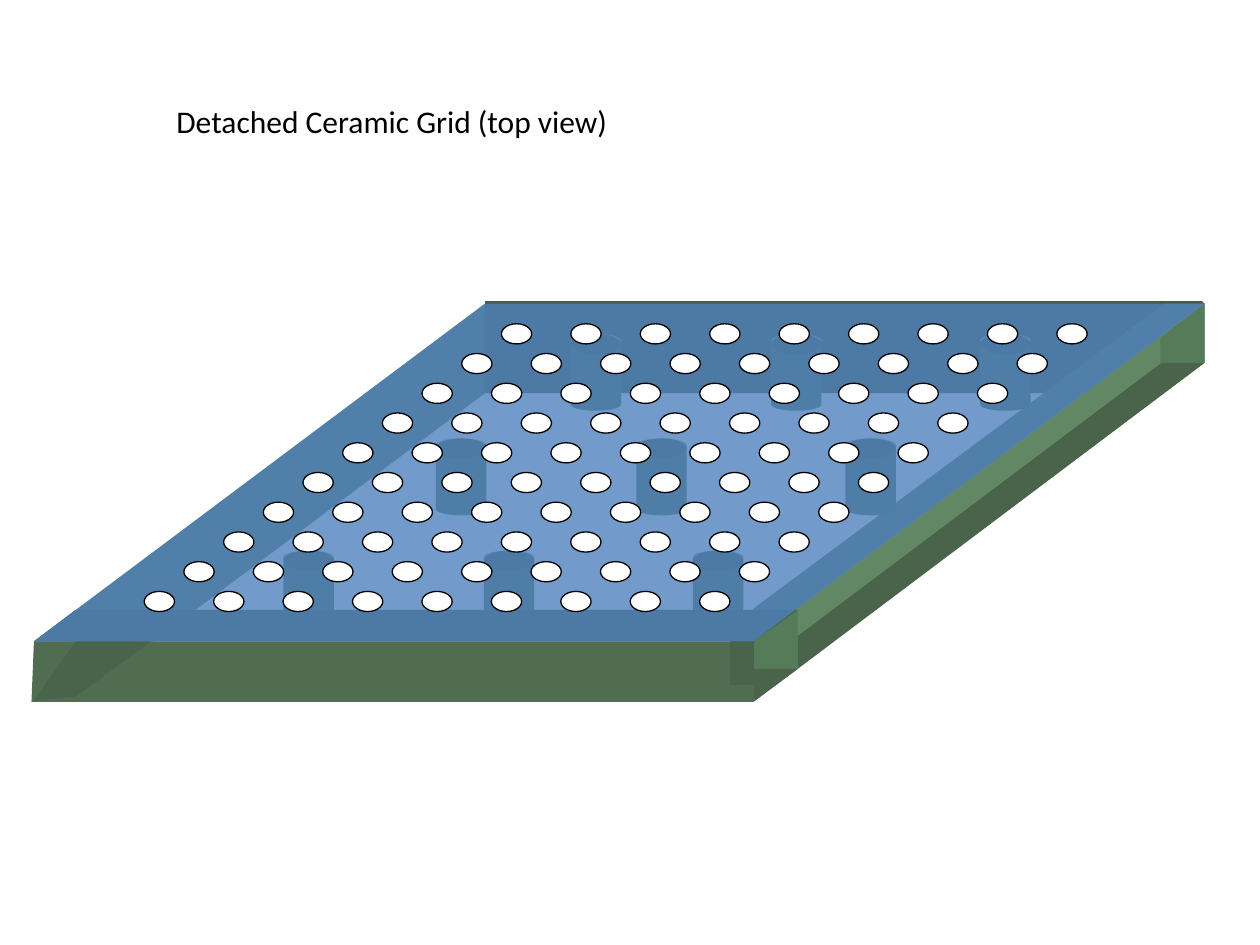
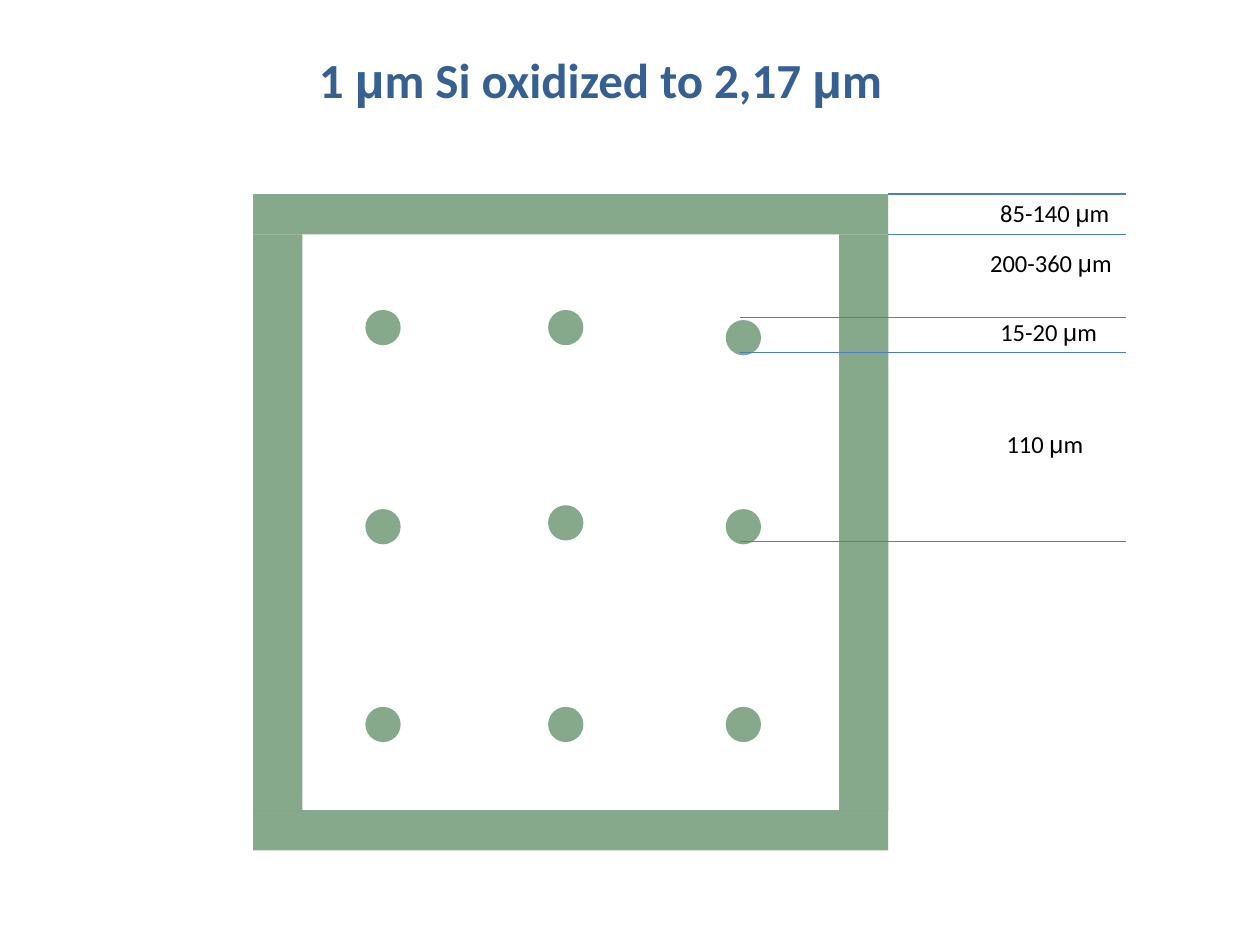
from lxml import etree
from pptx import Presentation
from pptx.dml.color import RGBColor
from pptx.enum.shapes import MSO_CONNECTOR, MSO_SHAPE
from pptx.enum.text import MSO_ANCHOR, MSO_AUTO_SIZE, PP_ALIGN
from pptx.oxml.ns import qn
from pptx.util import Inches, Pt

RECTANGLE, ELLIPSE = MSO_SHAPE.RECTANGLE, MSO_SHAPE.OVAL
CAN, PARALLELOGRAM = MSO_SHAPE.CAN, MSO_SHAPE.PARALLELOGRAM
STRAIGHT = MSO_CONNECTOR.STRAIGHT
LEFT, TOP = PP_ALIGN.LEFT, MSO_ANCHOR.TOP
NO_FIT, GROW = MSO_AUTO_SIZE.NONE, MSO_AUTO_SIZE.SHAPE_TO_FIT_TEXT

COLORS = {
    "oxide": "6A946E",
    "plate": "4F81BD",
    "hole": "FFFFFF",
    "text": "000000",
    "heading": "376092",
    "dimension": "4B7EBC",
    "front": "506D52",
    "side": "618764",
    "corner": "567B59",
    "shade": "4A644C",
    "rim": "547C5E",
    "back": "455E45",
    "post": "4C7456",
}
TITLE_ONLY = 5
TEXT_FONT, GREEK_FONT = "Calibri", "Arial"


def rgb(name):
    return RGBColor.from_string(COLORS[name])


def paint(shape, color, opacity=100, outline=None):
    shape.shadow.inherit = False
    shape.fill.solid()
    shape.fill.fore_color.rgb = rgb(color)
    if opacity < 100:
        tint = shape._element.spPr.find(qn("a:solidFill"))[0]
        etree.SubElement(tint, qn("a:alpha")).set("val", str(opacity * 1000))
    if outline:
        shape.line.color.rgb = rgb(outline)
        shape.line.width = Pt(0.75)
    else:
        shape.line.fill.background()


def add_preset(shapes, kind, box, color, opacity=100, outline=None):
    shape = shapes.add_shape(kind, *map(Inches, box))
    paint(shape, color, opacity, outline)
    return shape


def add_face(shapes, origin, corners, color):
    """Draw a filled polygon whose corners are measured from origin."""
    points = [(Inches(origin[0] + x), Inches(origin[1] + y)) for x, y in corners]
    builder = shapes.build_freeform(*points[0], scale=1.0)
    builder.add_line_segments(points[1:], close=True)
    paint(builder.convert_to_shape(), color)


def write(frame, text, size, color, bold=False):
    """Write one line, setting each Greek letter in its own font."""
    frame.word_wrap = False
    frame.vertical_anchor = TOP
    paragraph = frame.paragraphs[0]
    paragraph.alignment = LEFT
    for index, piece in enumerate(text.split("μ")):
        parts = [("μ", GREEK_FONT)] if index else []
        parts += [(piece, TEXT_FONT)] if piece else []
        for words, font in parts:
            run = paragraph.add_run()
            run.text = words
            run.font.name = font
            run.font.size = Pt(size)
            run.font.bold = bold
            run.font.color.rgb = rgb(color)


def add_titled_slide(prs, text, box, size, color, bold=False):
    slide = prs.slides.add_slide(prs.slide_layouts[TITLE_ONLY])
    title = slide.shapes.title
    title.left, title.top, title.width, title.height = map(Inches, box)
    write(title.text_frame, text, size, color, bold)
    title.text_frame.auto_size = NO_FIT
    return slide


def draw_tray_walls(shapes, box):
    """Draw the green tray in perspective, below and around the plate."""
    origin = box[:2]
    width, height = box[2:]
    skew, depth = 3.58, 0.48
    front_left, back_left = (0, height), (skew, 0)
    front_right, back_right = (width - skew, height), (width, 0)
    front_x, bottom = front_right[0], height + depth
    corner_x, corner_y = front_x + 0.35, 2.9
    floor_left, floor_right = (skew, 0.71), (8.02, 0.71)
    faces = [
        ("back", [(skew, -0.02), (width - 0.02, -0.02), back_right,
                  floor_right, floor_left]),
        ("rim", [front_left, back_left, floor_left, (0.95, height)]),
        ("rim", [front_right, back_right, (8.97, 0), (front_x, 2.42)]),
        ("side", [front_right, back_right, (width, 0.47), (front_x, bottom)]),
        ("shade", [(corner_x, corner_y), (corner_x, 2.64), (8.95, 0.47),
                   (width, 0.47)]),
        ("corner", [(8.94, 0.27), back_right, (width, 0.47), (8.94, 0.47)]),
        ("corner", [front_right, (corner_x, 2.43), (corner_x, corner_y),
                    (front_x, bottom)]),
        ("shade", [(front_x, corner_y), (corner_x, corner_y), (front_x, bottom)]),
        ("front", [front_left, front_right, (front_x, bottom), (-0.02, bottom)]),
        ("shade", [(0, bottom - 0.01), (0.33, height), (0.93, height),
                   (0.33, bottom - 0.04)]),
        ("shade", [(front_x - 0.19, height), front_right, (front_x, 3.03),
                   (front_x - 0.19, 3.03)]),
    ]
    for color, corners in faces:
        add_face(shapes, origin, corners, color)
    draw_posts(shapes, origin)
    add_face(shapes, origin, [front_left, (0.33, 2.43), (corner_x, 2.43),
                              front_right], "back")


def draw_posts(shapes, origin):
    width, height, cap = 0.4, 0.61, 0.16
    rows = [(0.24, (4.26, 5.85, 7.51)),
            (1.07, (3.19, 4.78, 6.44)),
            (1.96, (1.98, 3.57, 5.23))]
    for y, columns in rows:
        for x in columns:
            left, top = origin[0] + x, origin[1] + y
            add_preset(shapes, CAN, (left, top, width, height), "post")
            add_preset(shapes, ELLIPSE, (left, top, width, cap), "back")


def draw_perforated_plate(shapes, box):
    left, top, _, height = box
    group = shapes.add_group_shape().shapes
    plate = add_preset(group, PARALLELOGRAM, box, "plate", 80)
    plate.adjustments[0] = 3.58 / height
    rows, columns = 10, 9
    row_shift, row_step, column_step = 0.315, 0.236, 0.551
    for row in range(rows):
        for column in range(columns):
            x = left + 3.71 - row * row_shift + column * column_step
            y = top + 0.16 + row * row_step
            add_preset(group, ELLIPSE, (x, y, 0.24, 0.16), "hole", outline="text")


def build_grid_slide(prs):
    slide = add_titled_slide(prs, "Detached Ceramic Grid (top view)",
                             (1.3, 0.76, 3.72, 0.4), 18, "text")
    grid_box = (0.27, 2.41, 9.29, 2.68)
    draw_tray_walls(slide.shapes, grid_box)
    draw_perforated_plate(slide.shapes, grid_box)


def draw_frame(shapes, box):
    left, top, width, height = box
    beam, wall = 0.32, 0.39
    for y in (top, top + height - beam):
        add_preset(shapes, RECTANGLE, (left, y, width, beam), "oxide", 80)
    for x in (left, left + width - wall):
        add_preset(shapes, RECTANGLE, (x, top + beam, wall, height - 2 * beam),
                   "oxide", 80)


def draw_pillars(shapes, box):
    left, top = box[:2]
    columns = [(0.89, (0.92, 2.5, 4.07)),
               (2.34, (0.92, 2.47, 4.07)),
               (3.75, (1.0, 2.5, 4.07))]
    for x, rows in columns:
        for y in rows:
            add_preset(shapes, ELLIPSE, (left + x, top + y, 0.28, 0.28),
                       "oxide", 80)


def draw_dimensions(shapes, box):
    left, top, width, _ = box
    edge, pillar, end = left + width, left + 3.86, left + 6.93
    levels = [(edge, 0), (edge, 0.32), (pillar, 0.98), (pillar, 1.26),
              (pillar, 2.76)]
    for start, y in levels:
        line = shapes.add_connector(STRAIGHT, Inches(start), Inches(top + y),
                                    Inches(end), Inches(top + y))
        line.line.color.rgb = rgb("dimension")
        line.line.width = Pt(0.75)
        etree.SubElement(line._element.spPr, qn("a:effectLst"))
    labels = [("85-140 μm", 5.83, -0.02, 1.07),
              ("200-360 μm", 5.75, 0.38, 1.17),
              ("15-20 μm", 5.83, 0.93, 0.98),
              ("110 μm", 5.88, 1.82, 0.82)]
    for text, x, y, label_width in labels:
        label = shapes.add_textbox(Inches(left + x), Inches(top + y),
                                   Inches(label_width), Inches(0.34))
        write(label.text_frame, text, 14, "text")
        label.text_frame.auto_size = GROW


def build_oxidation_slide(prs):
    slide = add_titled_slide(prs, "1 μm Si oxidized to 2,17 μm",
                             (2.43, 0.34, 4.7, 0.81), 28, "heading", True)
    frame_box = (2.01, 1.54, 5.04, 5.21)
    draw_frame(slide.shapes, frame_box)
    draw_pillars(slide.shapes, frame_box)
    draw_dimensions(slide.shapes, frame_box)


def main():
    prs = Presentation()
    prs.slide_width, prs.slide_height = Inches(10), Inches(7.5)
    build_grid_slide(prs)
    build_oxidation_slide(prs)
    prs.save("out.pptx")


if __name__ == "__main__":
    main()
